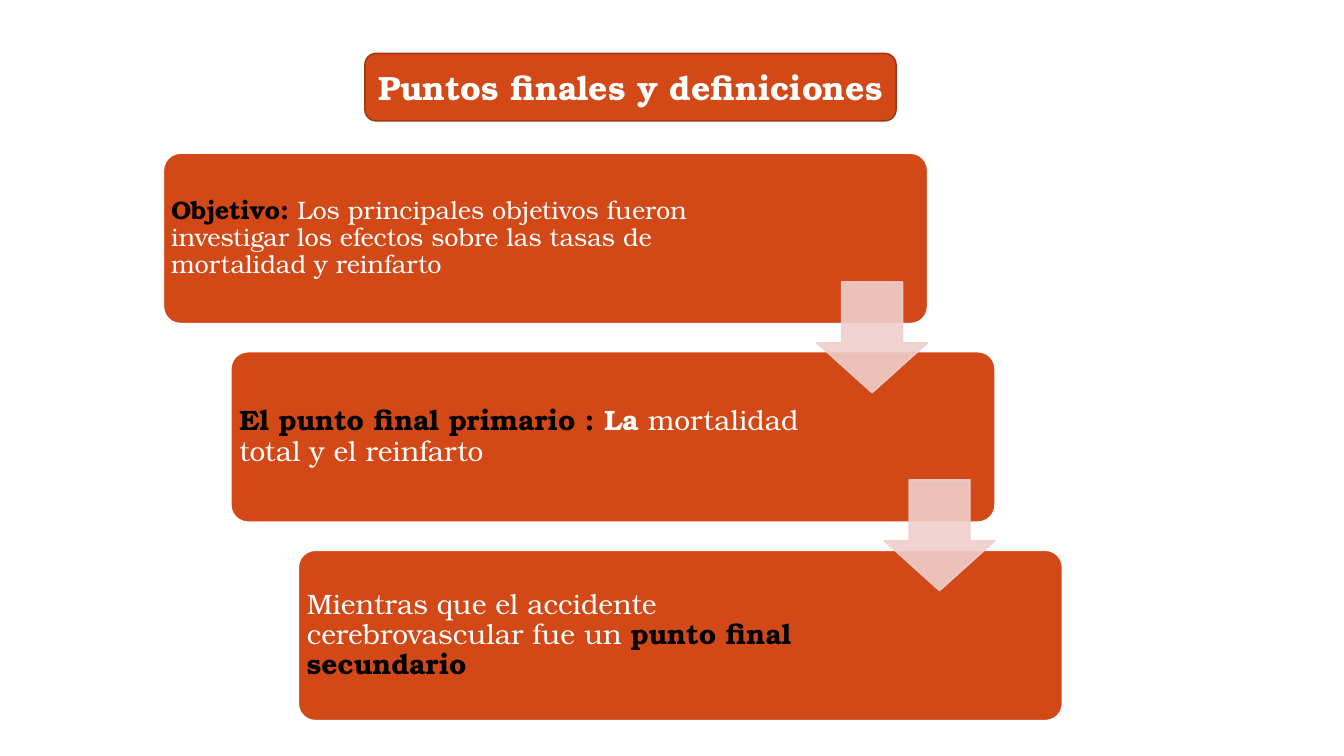
from dataclasses import dataclass

from lxml import etree
from pptx import Presentation
from pptx.dml.color import RGBColor
from pptx.enum.shapes import MSO_SHAPE
from pptx.enum.text import MSO_ANCHOR, PP_ALIGN
from pptx.oxml.ns import qn
from pptx.util import Pt

ROUND = MSO_SHAPE.ROUNDED_RECTANGLE
TITLE = MSO_SHAPE.FLOWCHART_ALTERNATE_PROCESS
ARROW = MSO_SHAPE.DOWN_ARROW
MIDDLE = MSO_ANCHOR.MIDDLE
CENTER = PP_ALIGN.CENTER


@dataclass
class Theme:
    font: str = "TeX Gyre Bonum"
    rust: RGBColor = RGBColor(0xD3, 0x48, 0x17)
    edge: RGBColor = RGBColor(0x9C, 0x35, 0x11)
    pink: RGBColor = RGBColor(0xEF, 0xCF, 0xCC)
    white: RGBColor = RGBColor(0xFF, 0xFF, 0xFF)
    black: RGBColor = RGBColor(0, 0, 0)
    head: int = 24
    body: int = 20
    small: int = 18


theme = Theme()
deck = Presentation()
deck.slide_width, deck.slide_height = Pt(960), Pt(540)
slide = deck.slides.add_slide(deck.slide_layouts[6])


def draw(kind, left, top, width, height, fill, line):
    shape = slide.shapes.add_shape(kind, Pt(left), Pt(top), Pt(width), Pt(height))
    shape.shadow.inherit = False
    shape.fill.solid()
    shape.fill.fore_color.rgb = fill
    shape.line.color.rgb = line
    shape.line.width = Pt(1)
    return shape


def write(frame, size, parts):
    frame.word_wrap = True
    frame.vertical_anchor = MIDDLE
    para = frame.paragraphs[0]
    para.font.name = theme.font
    para.font.size = Pt(size)
    for text, color, bold in parts:
        run = para.add_run()
        run.text = text
        run.font.color.rgb = color
        run.font.bold = bold
    return para


title = draw(TITLE, 260.64, 38.16, 379.44, 48.24, theme.rust, theme.edge)
para = write(title.text_frame, theme.head,
             [("Puntos finales y definiciones", theme.white, True)])
para.alignment = CENTER

steps = [
    (theme.small, 421.2, 5.4, [
        ("Objetivo: ", theme.black, True),
        ("Los principales objetivos fueron investigar los efectos sobre "
         "las tasas de mortalidad y reinfarto", theme.white, False)]),
    (theme.body, 418.32, 6, [
        ("El punto final primario : ", theme.black, True),
        ("La ", theme.white, True),
        ("mortalidad total y el reinfarto", theme.white, False)]),
    (theme.body, 418.32, 6, [
        ("Mientras que el accidente cerebrovascular fue un ", theme.white, False),
        ("punto final secundario", theme.black, True)]),
]
left, top, width, height = 116.8, 109.5, 545.76, 121.6
shift, drop = 48.16, 141.8

for i, (size, span, inset, parts) in enumerate(steps):
    x, y = left + i * shift, top + i * drop
    card = draw(ROUND, x, y, width, height, theme.rust, theme.white)
    card.adjustments[0] = 0.1
    box = slide.shapes.add_textbox(Pt(x), Pt(y), Pt(span), Pt(height))
    frame = box.text_frame
    frame.margin_left = frame.margin_right = Pt(inset)
    frame.margin_top = frame.margin_bottom = Pt(inset)
    write(frame, size, parts).line_spacing = 0.9

side = 79.2
for i in range(len(steps) - 1):
    x = left + width - side + i * shift
    arrow = draw(ARROW, x, 201.4 + i * 141.4, side, side, theme.pink, theme.pink)
    arrow.adjustments[0] = 0.55
    arrow.adjustments[1] = 0.45
    for color in arrow.element.spPr.iter(qn("a:srgbClr")):
        etree.SubElement(color, qn("a:alpha"), val="90000")

deck.save("out.pptx")
